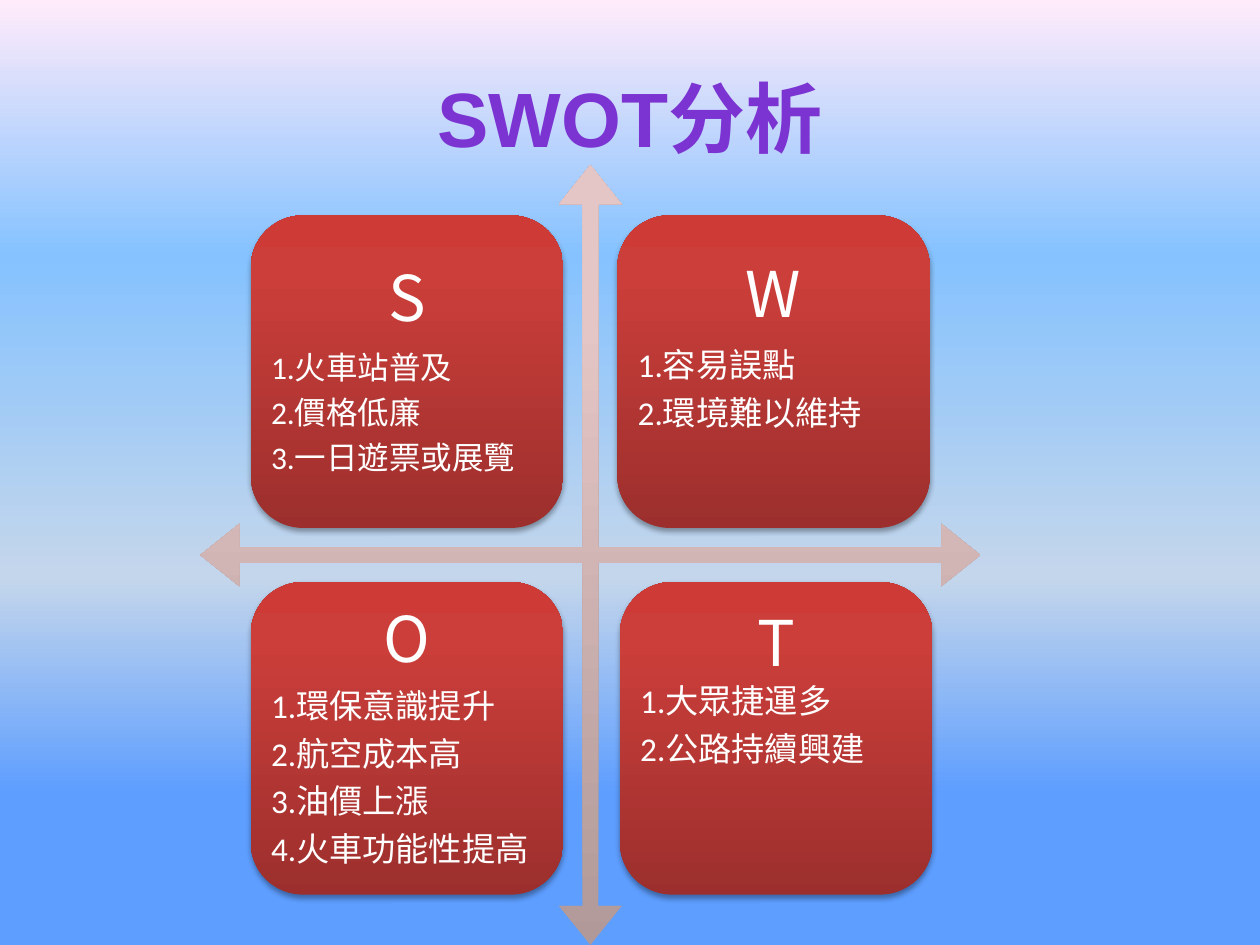
from dataclasses import dataclass

from lxml import etree
from pptx import Presentation
from pptx.dml.color import RGBColor
from pptx.enum.shapes import MSO_SHAPE
from pptx.enum.text import MSO_ANCHOR, PP_ALIGN
from pptx.oxml.ns import qn
from pptx.util import Inches, Pt

ROUNDED = MSO_SHAPE.ROUNDED_RECTANGLE
QUAD_ARROW = MSO_SHAPE.QUAD_ARROW
MIDDLE = MSO_ANCHOR.MIDDLE
CENTER, LEFT = PP_ALIGN.CENTER, PP_ALIGN.LEFT

COLORS = {"title": "7B34D2", "text": "FFFFFF", "shadow": "000000"}
GRADIENTS = {
    "sky": [(0, "FFEBFA"), (27, "85C2FF"), (61, "C4D6EB"), (84, "5E9EFF"), (100, "5E9EFF")],
    "axes": [(0, "B09998"), (80, "E5C6C6"), (100, "E6C7C6")],
    "card": [(0, "9C2F2D"), (80, "CB3E3A"), (100, "CE3B37")],
}
DOWNWARD, UPWARD = 270, 90
CARD_SIZE = 2.48
CARD_INSET = 0.04


@dataclass
class Quadrant:
    letter: str
    left: float
    top: float
    items: list[str]
    item_size: int = 19
    letter_spacing: float = 0.9
    letter_after: int = 10
    bottom_inset: float = CARD_INSET


QUADRANTS = [
    Quadrant("S", 1.99, 1.71, ["火車站普及", "價格低廉", "一日遊票或展覽"], item_size=18),
    Quadrant("W", 4.9, 1.71, ["容易誤點", "環境難以維持"], bottom_inset=0.42),
    Quadrant("O", 1.99, 4.62, ["環保意識提升", "航空成本高", "油價上漲", "火車功能性提高"],
             letter_after=8),
    Quadrant("T", 4.92, 4.62, ["大眾捷運多", "公路持續興建"],
             letter_spacing=0.1, bottom_inset=0.42),
]


def set_gradient(fill, element, name: str, angle: int) -> None:
    fill.gradient()
    fill.gradient_angle = angle
    stops = element.xpath(".//a:gsLst")[0]
    for stop in list(stops):
        stops.remove(stop)
    for percent, color in GRADIENTS[name]:
        stop = etree.SubElement(stops, qn("a:gs"), pos=str(percent * 1000))
        etree.SubElement(stop, qn("a:srgbClr"), val=color)


def add_shadow(shape) -> None:
    effects = shape.element.spPr.find(qn("a:effectLst"))
    shadow = etree.SubElement(effects, qn("a:outerShdw"), blurRad=str(Pt(3.1)),
                              dist=str(Pt(1.8)), dir="5400000", rotWithShape="0")
    color = etree.SubElement(shadow, qn("a:srgbClr"), val=COLORS["shadow"])
    etree.SubElement(color, qn("a:alpha"), val="35000")


def add_panel(slide, preset, left: float, top: float, size: float, gradient: str):
    panel = slide.shapes.add_shape(preset, Inches(left), Inches(top), Inches(size), Inches(size))
    panel.shadow.inherit = False
    panel.line.fill.background()
    set_gradient(panel.fill, panel.element, gradient, UPWARD)
    return panel


def format_line(paragraph, text: str, size: int, font: str, align, spacing: float) -> None:
    paragraph.text = text
    paragraph.alignment = align
    paragraph.line_spacing = spacing
    paragraph.font.size = Pt(size)
    paragraph.font.name = font
    paragraph.font.color.rgb = RGBColor.from_string(COLORS["text"])


def set_relative_space_after(paragraph, percent: int) -> None:
    paragraph.space_after = Pt(0)
    space = paragraph._p.pPr.find(qn("a:spcAft"))
    space.remove(space[0])
    etree.SubElement(space, qn("a:spcPct"), val=str(percent * 1000))


def add_quadrant(slide, quadrant: Quadrant) -> None:
    card = add_panel(slide, ROUNDED, quadrant.left, quadrant.top, CARD_SIZE, "card")
    add_shadow(card)
    frame = card.text_frame
    frame.word_wrap = True
    frame.vertical_anchor = MIDDLE
    frame.margin_left = frame.margin_right = frame.margin_top = Inches(CARD_INSET)
    frame.margin_bottom = Inches(quadrant.bottom_inset)
    heading = frame.paragraphs[0]
    format_line(heading, quadrant.letter, 36, "Noto Sans CJK SC", CENTER,
                quadrant.letter_spacing)
    heading.space_after = Pt(quadrant.letter_after)
    for number, item in enumerate(quadrant.items, start=1):
        entry = frame.add_paragraph()
        format_line(entry, f"{number}.{item}", quadrant.item_size, "Calibri", LEFT, 0.9)
        set_relative_space_after(entry, 35)


def add_title(slide, text: str) -> None:
    title = slide.shapes.title
    title.left, title.top = Inches(0.5), Inches(0.3)
    title.width, title.height = Inches(9), Inches(1.25)
    title.text_frame.vertical_anchor = MIDDLE
    heading = title.text_frame.paragraphs[0]
    heading.text = text
    heading.alignment = CENTER
    heading.font.name = "Arial"
    heading.font.size = Pt(44)
    heading.font.bold = True
    heading.font.color.rgb = RGBColor.from_string(COLORS["title"])


def main() -> None:
    deck = Presentation()
    deck.slide_width, deck.slide_height = Inches(10), Inches(7.5)
    slide = deck.slides.add_slide(deck.slide_layouts[5])
    set_gradient(slide.background.fill, slide.element, "sky", DOWNWARD)
    add_title(slide, "SWOT分析")
    axes = add_panel(slide, QUAD_ARROW, 1.59, 1.31, 6.19, "axes")
    for index, ratio in enumerate((0.02, 0.04, 0.05)):
        axes.adjustments[index] = ratio
    for quadrant in QUADRANTS:
        add_quadrant(slide, quadrant)
    deck.save("out.pptx")


if __name__ == "__main__":
    main()
